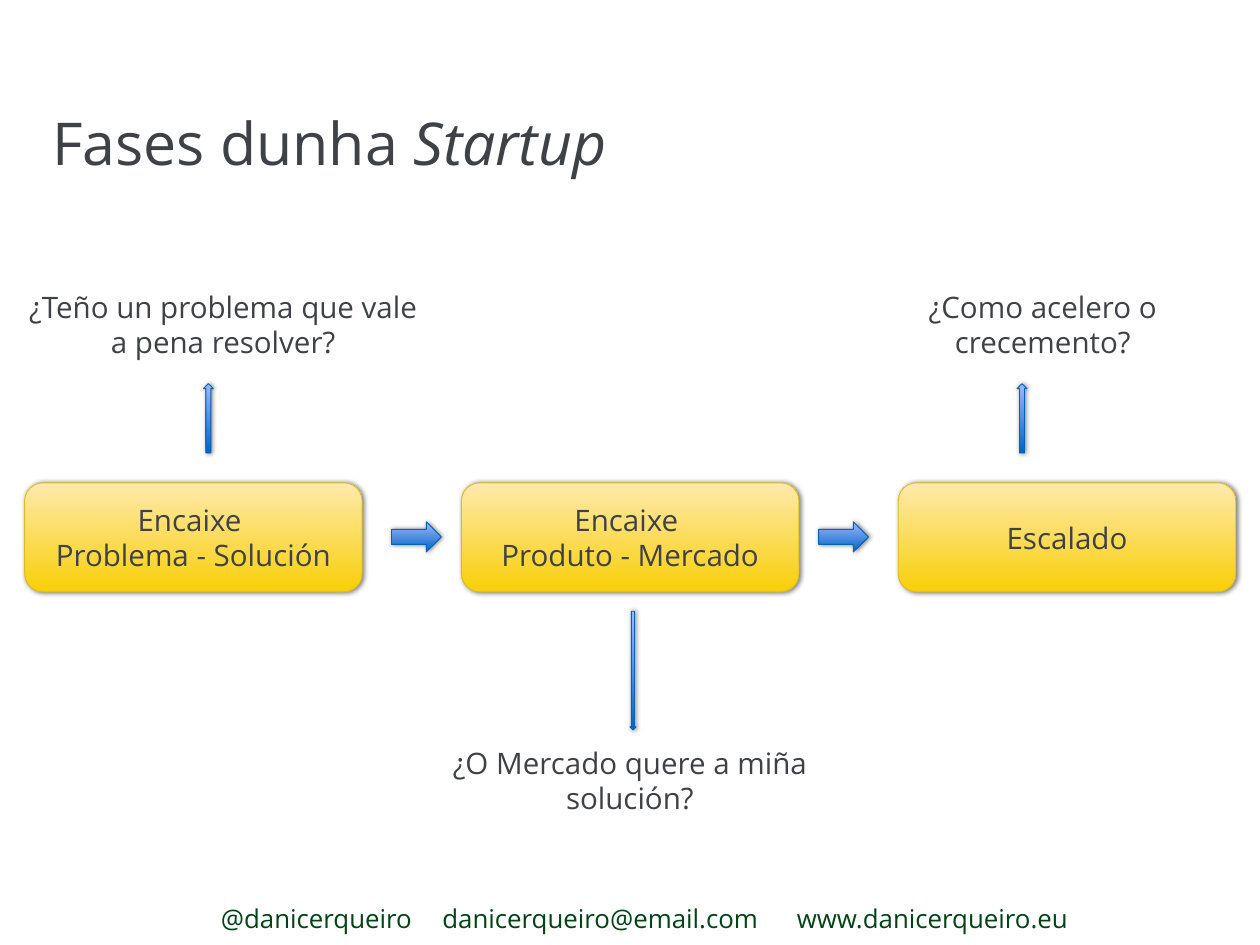
from dataclasses import dataclass

from lxml.etree import SubElement
from pptx import Presentation
from pptx.dml.color import RGBColor
from pptx.enum.shapes import MSO_SHAPE
from pptx.enum.text import MSO_ANCHOR, MSO_AUTO_SIZE, PP_ALIGN
from pptx.oxml.ns import qn
from pptx.util import Pt


@dataclass(frozen=True)
class Theme:
    """Colours and type sizes of the slide."""
    font: str = "Open Sans"
    text: str = "3E4247"
    contact: str = "004416"
    phase: tuple = ("F8CF07", "FFE9AD", "DCBC1E")
    arrow: tuple = ("0065C3", "A0B8FF", "0063BF")
    shadow: str = "000000"
    title_size: int = 48
    body_size: int = 24
    contact_size: int = 21


THEME = Theme()


def place(sp, left, top, width, height):
    """Set the position and size of a shape in points."""
    sp.left, sp.top, sp.width, sp.height = map(Pt, (left, top, width, height))


def set_insets(tf, inset):
    """Give a text frame the same inset on all sides."""
    tf.margin_left = tf.margin_right = tf.margin_top = tf.margin_bottom = Pt(inset)


def format_text(tf, size=THEME.body_size, color=THEME.text, align=PP_ALIGN.CENTER):
    """Format all the text of a frame alike."""
    for p in tf.paragraphs:
        p.alignment = align
        for r in p.runs:
            r.font.name = THEME.font
            r.font.size = Pt(size)
            r.font.color.rgb = RGBColor.from_string(color)


def add_shadow(sp):
    """Add a soft shadow to the right of a shape."""
    sp.shadow.inherit = False
    effects = sp._element.spPr.find(qn("a:effectLst"))
    shadow = SubElement(effects, qn("a:outerShdw"), blurRad=str(Pt(4)),
                        dist=str(Pt(1)), dir="0", rotWithShape="0")
    color = SubElement(shadow, qn("a:srgbClr"), val=THEME.shadow)
    SubElement(color, qn("a:alpha"), val="50000")


def add_gradient_shape(slide, kind, box, colors):
    """Add a preset shape with a vertical gradient, outline and shadow."""
    bottom, top, outline = colors
    sp = slide.shapes.add_shape(kind, *map(Pt, box))
    sp.fill.gradient()
    sp.fill.gradient_angle = 90
    for stop, color in zip(sp.fill.gradient_stops, (bottom, top)):
        stop.color.rgb = RGBColor.from_string(color)
    sp.line.color.rgb = RGBColor.from_string(outline)
    sp.line.width = Pt(0.75)
    add_shadow(sp)
    return sp


def add_phase(slide, left, text):
    """Add one phase box."""
    sp = add_gradient_shape(slide, MSO_SHAPE.ROUNDED_RECTANGLE,
                            (left, 392.4, 274.3, 88.6), THEME.phase)
    tf = sp.text_frame
    tf.text = text
    tf.vertical_anchor = MSO_ANCHOR.MIDDLE
    format_text(tf)


def add_question(slide, left, top, text):
    """Add the question that a phase answers."""
    sp = slide.shapes.add_textbox(*map(Pt, (left, top, 338.4, 65.5)))
    tf = sp.text_frame
    tf.word_wrap = True
    tf.text = text
    format_text(tf)


def add_title(slide, plain, emphasis):
    """Fill the title placeholder, ending in italics."""
    sp = slide.shapes.title
    place(sp, 38.2, 82.1, 978.5, 66.2)
    tf = sp.text_frame
    tf.text = plain
    r = tf.paragraphs[0].add_run()
    r.text = emphasis
    r.font.italic = True
    tf.auto_size = MSO_AUTO_SIZE.NONE
    tf.vertical_anchor = MSO_ANCHOR.MIDDLE
    set_insets(tf, 4.3)
    format_text(tf, THEME.title_size, align=PP_ALIGN.LEFT)


def add_contacts(slide, contacts, stops):
    """Add the contact line, with one tab stop for each entry."""
    sp = slide.shapes.add_textbox(*map(Pt, (7.2, 725.8, 1009.4, 36)))
    tf = sp.text_frame
    tf.word_wrap = True
    tf.vertical_anchor = MSO_ANCHOR.MIDDLE
    set_insets(tf, 4.3)
    p = tf.paragraphs[0]
    p.text = "\t".join(contacts)
    pPr = p._p.get_or_add_pPr()
    pPr.set("marL", str(Pt(stops[0])))
    pPr.set("indent", "0")
    tabs = SubElement(pPr, qn("a:tabLst"))
    for stop in stops[1:]:
        SubElement(tabs, qn("a:tab"), pos=str(Pt(stop)), algn="l")
    p.line_spacing = 1.2
    format_text(tf, THEME.contact_size, THEME.contact, PP_ALIGN.LEFT)


def main():
    """Build the slide on the phases of a startup."""
    prs = Presentation()
    prs.slide_width, prs.slide_height = Pt(1024), Pt(768)
    slide = prs.slides.add_slide(prs.slide_layouts[5])
    add_title(slide, "Fases dunha ", "Startup")

    phases = ("Encaixe \nProblema - Solución", "Encaixe \nProduto - Mercado", "Escalado")
    for i, text in enumerate(phases):
        add_phase(slide, 20 + 355 * i, text)

    for left, top, text in (
        (12.2, 231.1, "¿Teño un problema que vale a pena resolver?"),
        (342.7, 601.9, "¿O Mercado quere a miña solución?"),
        (678.2, 231.1, "¿Como acelero o crecemento?"),
    ):
        add_question(slide, left, top, text)

    for kind, box in (
        (MSO_SHAPE.RIGHT_ARROW, (318.2, 424.1, 40.5, 24.5)),
        (MSO_SHAPE.RIGHT_ARROW, (665.3, 424.1, 40.5, 24.5)),
        (MSO_SHAPE.UP_ARROW, (165.4, 311.8, 8, 56.2)),
        (MSO_SHAPE.UP_ARROW, (826.6, 311.8, 8, 56.2)),
        (MSO_SHAPE.DOWN_ARROW, (511.9, 496.8, 5, 96.5)),
    ):
        add_gradient_shape(slide, kind, box, THEME.arrow)

    contacts = ("@danicerqueiro", "danicerqueiro@email.com", "www.danicerqueiro.eu")
    add_contacts(slide, contacts, (168, 356, 628))
    prs.save("out.pptx")


if __name__ == "__main__":
    main()
